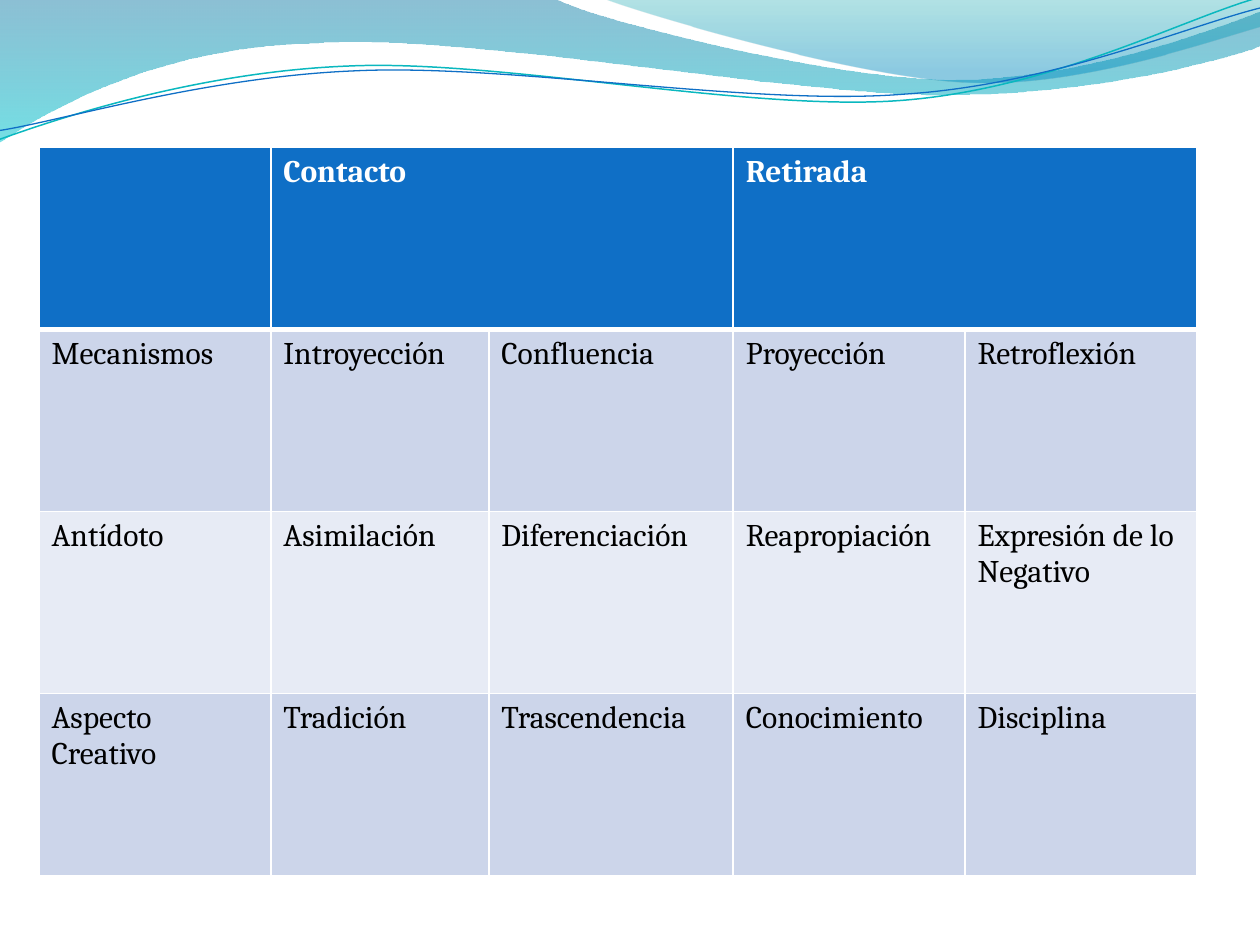
from lxml import etree
from pptx import Presentation
from pptx import util as u
from pptx.dml.color import RGBColor
from pptx.oxml import ns

SCALE = 9144  # EMU per px, 100 px to the inch
SLIDE_SIZE = (1000, 750)
FONT = "Cambria"
COLORS = {
    "header": "0F6FC6", "odd": "CCD5EA", "even": "E7EBF5",
    "white": "FFFFFF", "black": "000000",
    "steel": "0074A1", "cyan": "00C6CF", "teal": "00A1A9", "sky": "008BBF",
    "line_teal": "0AB8BF", "line_blue": "0F6FC6",
}

# Content: header labels span two columns each
HEADER = {1: "Contacto", 3: "Retirada"}
ROWS = [
    ["Mecanismos", "Introyección", "Confluencia", "Proyección", "Retroflexión"],
    ["Antídoto", "Asimilación", "Diferenciación", "Reapropiación", "Expresión de lo Negativo"],
    ["Aspecto Creativo", "Tradición", "Trascendencia", "Conocimiento", "Disciplina"],
]
TABLE_LEFT, TABLE_TOP, TABLE_HEIGHT = 31, 117, 578
COLUMN_WIDTHS = [184, 173, 194, 184, 184]

# Outlines: one point is a straight step, three points are a Bézier curve
WAVES = [
    {"start": (0, 0),
     "steps": [[(440, -1)],
               [(476, 17), (664, 63), (758, 63)], [(853, 63), (958, 26), (1000, 9)],
               [(1001, 36)],
               [(983, 44), (870, 76), (746, 75)], [(622, 75), (382, 28), (257, 34)],
               [(129, 36), (46, 83), (-1, 113)]],
     "stops": [(0, "steel", 45), (100, "cyan", 55)]},
    {"start": (479, -1),
     "steps": [[(509, 11), (682, 62), (769, 65)], [(856, 69), (961, 32), (1000, 21)],
               [(1000, 0)]],
     "stops": [(0, "teal", 30), (80, "sky", 45)]},
]
# Thin lines are given level and then turned
LINE_ROTATION = 357.3
LINES = [
    {"start": (-2, 87),
     "steps": [[(47, 72), (158, 41), (277, 42)], [(396, 42), (591, 93), (712, 90)],
               [(832, 87), (940, 36), (1000, 22)]],
     "color": "line_teal", "width": 0.85},
    {"start": (-2, 80),
     "steps": [[(46, 75), (164, 45), (283, 46)], [(404, 46), (596, 89), (716, 85)],
               [(835, 83), (942, 42), (1002, 30)]],
     "color": "line_blue", "width": 0.75},
]


def emu(px):
    return round(px * SCALE)


def rgb(name):
    return RGBColor.from_string(COLORS[name])


def add_outline(shapes, start, steps, close):
    """Build a freeform, then join each three-point step into one curve."""
    builder = shapes.build_freeform(*map(emu, start))
    points = [(emu(x), emu(y)) for step in steps for x, y in step]
    builder.add_line_segments(points, close=close)
    shape = builder.convert_to_shape()
    shape.shadow.inherit = False
    segments = iter(list(shape.element.iter(ns.qn("a:lnTo"))))
    for step in steps:
        first, *others = [next(segments) for _ in step]
        if others:
            first.tag = ns.qn("a:cubicBezTo")
        for other in others:
            first.append(other[0])
            other.getparent().remove(other)
    return shape


def fill_gradient(shape, stops):
    shape.fill.gradient()
    shape.fill.gradient_angle = 270  # top to bottom
    for stop, (position, color, _) in zip(shape.fill.gradient_stops, stops):
        stop.position = position / 100
        stop.color.rgb = rgb(color)
    for node, (_, _, opacity) in zip(shape.element.iter(ns.qn("a:srgbClr")), stops):
        etree.SubElement(node, ns.qn("a:alpha"), val=str(opacity * 1000))


def set_text(cell, text, *, color="black", bold=False, size=18):
    paragraph = cell.text_frame.paragraphs[0]
    run = paragraph.add_run()
    run.text = text
    run.font.name, run.font.size, run.font.bold = FONT, u.Pt(size), bold
    run.font.color.rgb = rgb(color)


def style_cell(cell, fill, top=1, bottom=1):
    cell.fill.solid()
    cell.fill.fore_color.rgb = rgb(fill)
    properties = cell._tc.get_or_add_tcPr()
    sides = {"lnL": 1, "lnR": 1, "lnT": top, "lnB": bottom}
    for index, (side, width) in enumerate(sides.items()):
        border = etree.Element(ns.qn(f"a:{side}"), w=str(u.Pt(width)))
        solid = etree.SubElement(border, ns.qn("a:solidFill"))
        etree.SubElement(solid, ns.qn("a:srgbClr"), val=COLORS["white"])
        properties.insert(index, border)


def add_table(slide):
    row_count = len(ROWS) + 1
    table = slide.shapes.add_table(
        row_count, len(COLUMN_WIDTHS), emu(TABLE_LEFT), emu(TABLE_TOP),
        emu(sum(COLUMN_WIDTHS)), emu(TABLE_HEIGHT)).table
    for column, width in zip(table.columns, COLUMN_WIDTHS):
        column.width = emu(width)
    for row in table.rows:
        row.height = emu(TABLE_HEIGHT / row_count)

    # Header row
    for column in range(len(COLUMN_WIDTHS)):
        style_cell(table.cell(0, column), "header", bottom=3)
    for column, label in HEADER.items():
        table.cell(0, column).merge(table.cell(0, column + 1))
        set_text(table.cell(0, column), label, color="white", bold=True)

    # Body rows
    for row, labels in enumerate(ROWS, start=1):
        for column, label in enumerate(labels):
            cell = table.cell(row, column)
            style_cell(cell, "odd" if row % 2 else "even", top=3 if row == 1 else 1)
            set_text(cell, label)


def main():
    presentation = Presentation()
    presentation.slide_width, presentation.slide_height = map(emu, SLIDE_SIZE)
    slide = presentation.slides.add_slide(presentation.slide_layouts[6])

    # Decorative waves
    for wave in WAVES:
        shape = add_outline(slide.shapes, wave["start"], wave["steps"], close=True)
        fill_gradient(shape, wave["stops"])
        shape.line.fill.background()

    # Thin lines, grouped
    group = slide.shapes.add_group_shape()
    for line in LINES:
        shape = add_outline(group.shapes, line["start"], line["steps"], close=False)
        shape.rotation = LINE_ROTATION
        shape.fill.background()
        shape.line.color.rgb = rgb(line["color"])
        shape.line.width = u.Pt(line["width"])

    add_table(slide)
    presentation.save("out.pptx")


if __name__ == "__main__":
    main()
